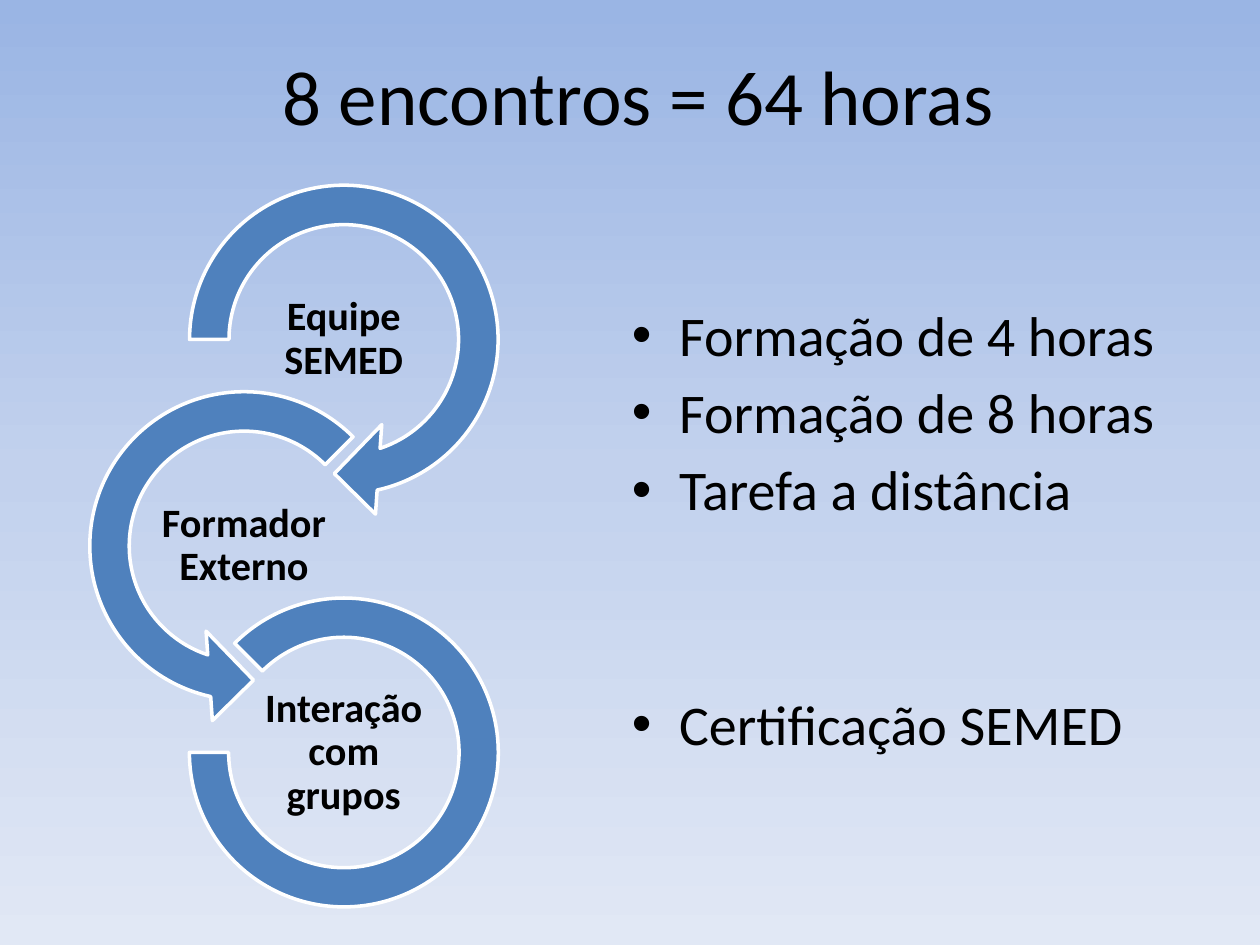
import copy
from dataclasses import dataclass

import pptx
import pptx.dml.color
import pptx.enum.shapes
import pptx.enum.text
import pptx.oxml
import pptx.oxml.ns
import pptx.util

Pt = pptx.util.Pt
SHAPE = pptx.enum.shapes.MSO_SHAPE
ALIGN = pptx.enum.text.PP_ALIGN
ANCHOR = pptx.enum.text.MSO_ANCHOR


@dataclass(frozen=True)
class Theme:
    font: str = "Calibri"
    text: str = "000000"
    ring: str = "4F81BD"
    outline: str = "FFFFFF"
    background: tuple = ((0, "9AB5E4"), (0.5, "C2D1ED"), (1, "E1E8F5"))
    title_size: int = 44
    bullet_size: int = 32
    label_size: int = 23


def rgb(value):
    return pptx.dml.color.RGBColor.from_string(value)


class SlideBuilder:
    def __init__(self, slide, theme):
        self.slide = slide
        self.theme = theme

    def format_runs(self, p, size, bold=False):
        for r in p.runs:
            r.font.name = self.theme.font
            r.font.size = Pt(size)
            r.font.bold = bold
            r.font.color.rgb = rgb(self.theme.text)

    def background(self):
        fill = self.slide.background.fill
        fill.gradient()
        fill.gradient_angle = 270
        stops = self.slide.element.find(".//" + pptx.oxml.ns.qn("a:gsLst"))
        stops.append(copy.deepcopy(stops[0]))
        for stop, (position, color) in zip(fill.gradient_stops, self.theme.background):
            stop.position = position
            stop.color.rgb = rgb(color)

    def title(self, text, left, top, width, height):
        sp = self.slide.shapes.title
        sp.left, sp.top, sp.width, sp.height = map(Pt, (left, top, width, height))
        tf = sp.text_frame
        tf.text = text
        tf.vertical_anchor = ANCHOR.MIDDLE
        p = tf.paragraphs[0]
        p.alignment = ALIGN.CENTER
        self.format_runs(p, self.theme.title_size)

    def textbox(self, left, top, width, height):
        sp = self.slide.shapes.add_textbox(*map(Pt, (left, top, width, height)))
        sp.text_frame.word_wrap = True
        return sp.text_frame

    def bullets(self, items, left, top, width, height, indent=27):
        """Each item is its text and the space before it."""
        tf = self.textbox(left, top, width, height)
        for i, (text, space) in enumerate(items):
            p = tf.add_paragraph() if i else tf.paragraphs[0]
            p.text = text
            pPr = p._p.get_or_add_pPr()
            pPr.set("marL", str(Pt(indent)))
            pPr.set("indent", str(-Pt(indent)))
            ns = pptx.oxml.ns.nsdecls("a")
            pPr.append(pptx.oxml.parse_xml(f'<a:buFont {ns} typeface="Arial"/>'))
            pPr.append(pptx.oxml.parse_xml(f'<a:buChar {ns} char="•"/>'))
            p.space_before = Pt(space)
            self.format_runs(p, self.theme.bullet_size)

    def ring(self, preset, center_x, center_y, size, adjustments):
        sp = self.slide.shapes.add_shape(
            preset, Pt(center_x - size / 2), Pt(center_y - size / 2), Pt(size), Pt(size))
        sp.shadow.inherit = False
        for i, value in enumerate(adjustments):
            sp.adjustments[i] = value
        sp.fill.solid()
        sp.fill.fore_color.rgb = rgb(self.theme.ring)
        sp.line.color.rgb = rgb(self.theme.outline)
        sp.line.width = Pt(2)

    def label(self, text, center_x, center_y, width=114, height=57):
        tf = self.textbox(center_x - width / 2, center_y - height / 2, width, height)
        tf.margin_left = tf.margin_right = tf.margin_top = tf.margin_bottom = Pt(1.5)
        tf.vertical_anchor = ANCHOR.MIDDLE
        tf.text = text
        p = tf.paragraphs[0]
        p.alignment = ALIGN.CENTER
        p.line_spacing = 0.9
        self.format_runs(p, self.theme.label_size, bold=True)


def main():
    prs = pptx.Presentation()
    prs.slide_width, prs.slide_height = Pt(720), Pt(540)
    builder = SlideBuilder(prs.slides.add_slide(prs.slide_layouts[5]), Theme())
    builder.background()
    builder.title(" 8 encontros = 64 horas", 0, 18, 720, 72)

    # Bulleted list, with a wide gap before the certification
    builder.bullets(
        [("Formação de 4 horas", 0), ("Formação de 8 horas", 5.8),
         ("Tarefa a distância", 5.8), ("Certificação SEMED", 95.5)],
        354, 168, 318, 318)

    # Chain of rings, alternating right and left at equal steps
    right, left = 196.5, 139.5
    first_y, step, label_drop = 194, 118, 0
    rings = [
        (SHAPE.CIRCULAR_ARROW, right, 205, (0.11, 11.423, 45, 108, 0.125),
         "Equipe SEMED"),
        (SHAPE.LEFT_CIRCULAR_ARROW, left, 205, (0.11, 11.423, 63, 189, 0.125),
         "Formador Externo"),
        (SHAPE.BLOCK_ARC, right, 176.5, (135, 108, 0.127),
         "Interação com grupos"),
    ]
    for i, (preset, x, size, adjustments, text) in enumerate(rings):
        y = first_y + i * step
        builder.ring(preset, x, y, size, adjustments)
        builder.label(text, x, y + label_drop)

    prs.save("out.pptx")


if __name__ == "__main__":
    main()
